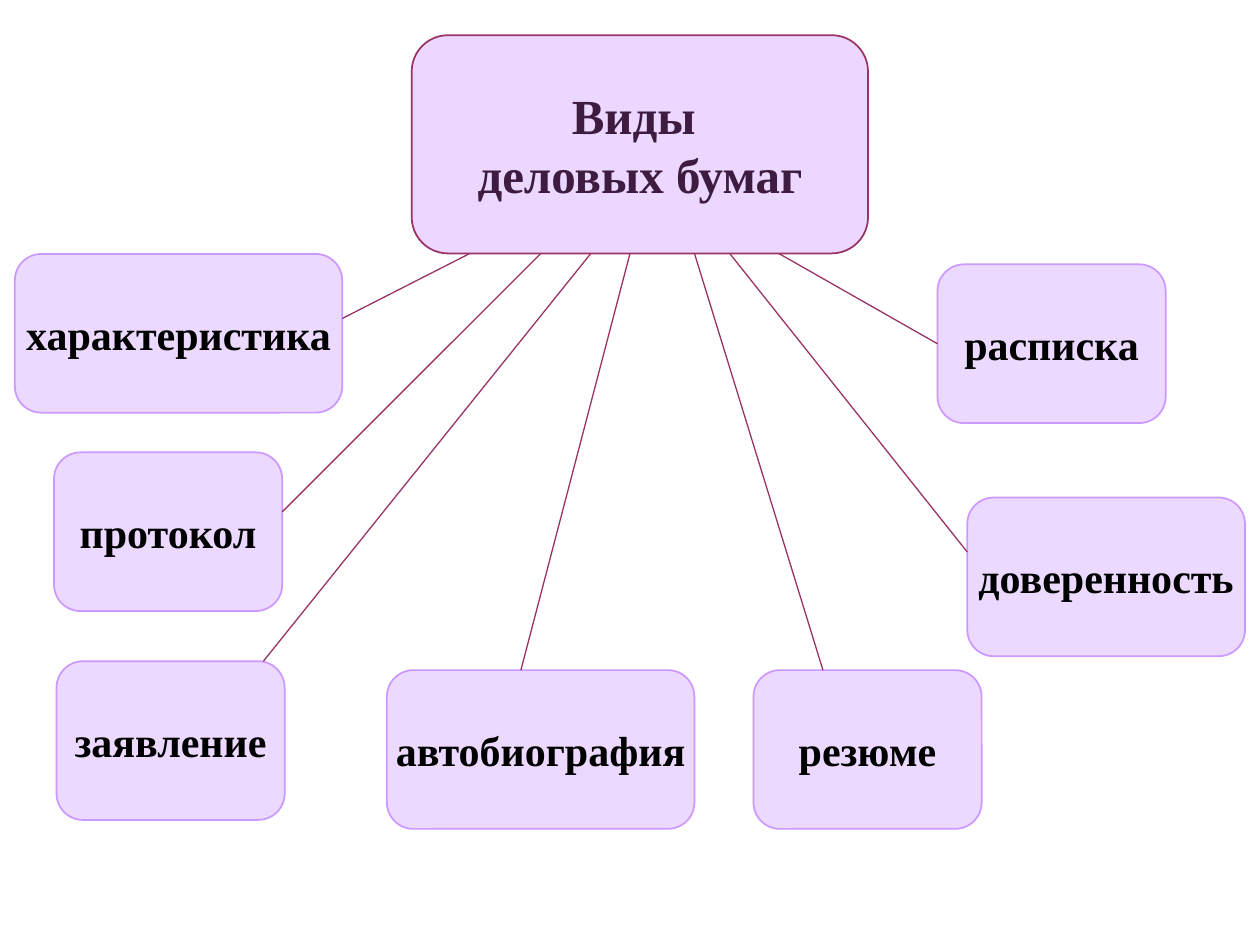
from lxml import etree
from pptx import Presentation
from pptx.dml.color import RGBColor
from pptx.enum import shapes, text
from pptx.oxml.ns import qn
from pptx.util import Cm, Pt

COLORS = {"lilac": "CC99FF", "plum": "993366", "heading": "3D1C40", "label": "000000"}
FONT = "Times New Roman"

HEADING = ["Виды ", "деловых бумаг"]
HEADING_BOX = (8.3, 0.71, 9.2, 4.4)
PAPER_HEIGHT = 3.2

# label, left, top, width, ray start x, side the ray reaches, distance along that side (cm)
PAPERS = [
    ("характеристика", 0.3, 5.12, 6.6, 9.47, "right", 1.3),
    ("протокол", 1.09, 9.12, 4.6, 10.9, "right", 1.2),
    ("заявление", 1.14, 13.33, 4.6, 11.91, "top", 4.17),
    ("расписка", 18.9, 5.33, 4.6, 15.7, "left", PAPER_HEIGHT / 2),
    ("доверенность", 19.5, 10.03, 5.6, 14.71, "left", 1.1),
    ("резюме", 15.19, 13.51, 4.6, 14, "top", 1.4),
    ("автобиография", 7.8, 13.51, 6.2, 12.7, "top", 2.7),
]
SIDE_SITES = {"top": 0, "left": 1, "right": 3}


def rgb(name):
    return RGBColor.from_string(COLORS[name])


def add_box(slide, box, lines, size, font_color, line_color, opacity):
    shape = slide.shapes.add_shape(
        shapes.MSO_SHAPE.ROUNDED_RECTANGLE, *(Cm(v) for v in box))
    shape.shadow.inherit = False
    shape.fill.solid()
    shape.fill.fore_color.rgb = rgb("lilac")
    fill_color = shape._element.spPr.find(qn("a:solidFill"))[0]
    etree.SubElement(fill_color, qn("a:alpha"), val=str(opacity * 1000))
    shape.line.color.rgb = rgb(line_color)
    shape.line.width = Pt(1)

    frame = shape.text_frame
    frame.word_wrap = False
    frame.vertical_anchor = text.MSO_ANCHOR.MIDDLE
    for i, line in enumerate(lines):
        paragraph = frame.add_paragraph() if i else frame.paragraphs[0]
        paragraph.alignment = text.PP_ALIGN.CENTER
        run = paragraph.add_run()
        run.text = line
        run.font.name = FONT
        run.font.size = Pt(size)
        run.font.bold = True
        run.font.color.rgb = rgb(font_color)
    return shape


def add_ray(slide, start, end):
    ray = slide.shapes.add_connector(
        shapes.MSO_CONNECTOR.STRAIGHT, *(Cm(v) for v in start + end))
    ray.line.color.rgb = rgb("plum")
    ray.line.width = Pt(0.75)
    etree.SubElement(ray._element.spPr, qn("a:effectLst"))
    return ray


def side_point(left, top, width, side, distance):
    if side == "top":
        return left + distance, top
    return left + (width if side == "right" else 0), top + distance


def main():
    deck = Presentation()
    deck.slide_width, deck.slide_height = Cm(25.4), Cm(19.05)
    slide = deck.slides.add_slide(deck.slide_layouts[6])

    add_box(slide, HEADING_BOX, HEADING, 28, "heading", "plum", 39)
    heading_bottom = HEADING_BOX[1] + HEADING_BOX[3]

    papers = [add_box(slide, (left, top, width, PAPER_HEIGHT), [label],
                      24, "label", "lilac", 37)
              for label, left, top, width, *_ in PAPERS]

    for paper, (_, left, top, width, start_x, side, distance) in zip(papers, PAPERS):
        end = side_point(left, top, width, side, distance)
        ray = add_ray(slide, (start_x, heading_bottom), end)
        side_length = width if side == "top" else PAPER_HEIGHT
        if distance == side_length / 2:
            ray.end_connect(paper, SIDE_SITES[side])

    deck.save("out.pptx")


if __name__ == "__main__":
    main()
